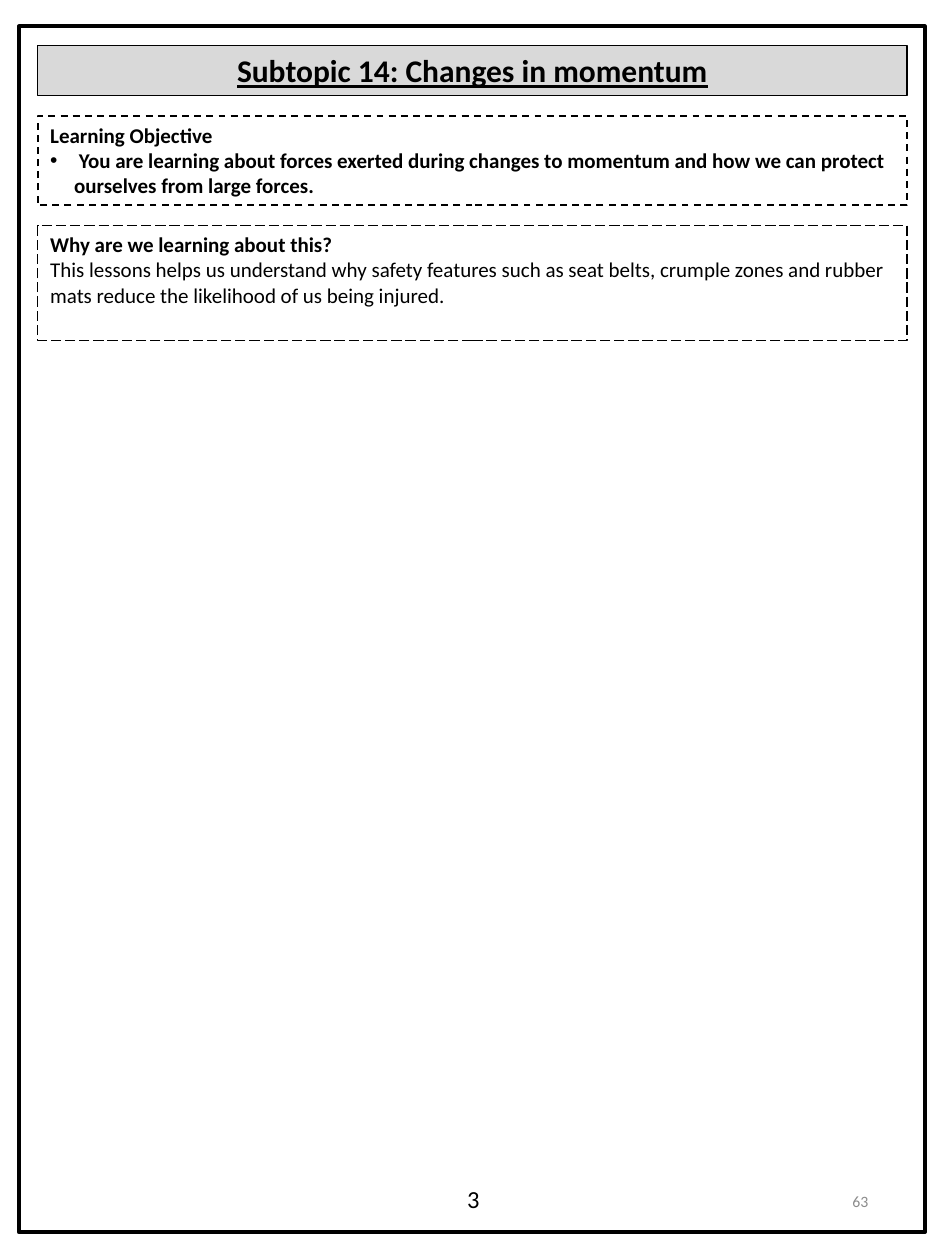
"""Build a lesson opener with a title, two dashed panels and a footer."""
from dataclasses import dataclass

from lxml.etree import SubElement
from pptx import Presentation
from pptx.dml.color import RGBColor
from pptx.enum.dml import MSO_LINE_DASH_STYLE as Dash
from pptx.enum.shapes import MSO_SHAPE as Kind
from pptx.enum.text import MSO_ANCHOR as Anchor, PP_ALIGN as Align
from pptx.oxml.ns import qn
from pptx.util import Inches, Pt


@dataclass(frozen=True)
class Theme:
    face: str = "Calibri"
    ink: str = "000000"
    band: str = "D9D9D9"
    mute: str = "8C8C8C"
    head: int = 18
    body: int = 12
    page: int = 14
    small: int = 9
    rule: float = 2.25


LOOK = Theme()
WIDE, HIGH = 7.5, 10
COL = WIDE / 50
LEFT, SPAN = 2 * COL, 46 * COL
TOP, GAP = 0.36, 0.16
HANG = 0.19

TITLE = {"size": LOOK.head, "bold": True, "line": True, "align": Align.CENTER}
STRONG = {"size": LOOK.body, "bold": True}
PLAIN = {"size": LOOK.body}
POINT = {**STRONG, "bullet": "•"}

PANELS = [
    {"high": 0.4, "fill": LOOK.band, "pen": 0.75, "dash": None, "text": [
        ("Subtopic 14: Changes in momentum", TITLE)]},
    {"high": 0.71, "fill": None, "pen": 1, "dash": Dash.DASH, "text": [
        ("Learning Objective", STRONG),
        (" You are learning about forces exerted during changes to momentum "
         "and how we can protect ourselves from large forces.", POINT)]},
    {"high": 0.91, "fill": None, "pen": 0.75, "dash": Dash.LONG_DASH, "text": [
        ("Why are we learning about this?", STRONG),
        ("This lessons helps us understand why safety features such as seat "
         "belts, crumple zones and rubber mats reduce the likelihood of us "
         "being injured.", PLAIN)]},
]

FOOTER = [
    ((3.61, 9.35, 0.53, 0.34), Anchor.TOP, "3", {"size": LOOK.page}),
    ((5.3, 9.27, 1.69, 0.53), Anchor.MIDDLE, "63",
     {"size": LOOK.small, "ink": LOOK.mute, "align": Align.RIGHT}),
]


def tint(code):
    return RGBColor.from_string(code)


def write(shape, lines, anchor=Anchor.TOP):
    frame = shape.text_frame
    frame.word_wrap = True
    frame.vertical_anchor = anchor
    for row, (text, style) in enumerate(lines):
        para = frame.add_paragraph() if row else frame.paragraphs[0]
        para.text = text
        para.alignment = style.get("align", Align.LEFT)
        font = para.font
        font.name, font.size = LOOK.face, Pt(style["size"])
        font.bold = style.get("bold", False)
        font.underline = style.get("line", False)
        font.color.rgb = tint(style.get("ink", LOOK.ink))
        if "bullet" in style:
            props = para._p.get_or_add_pPr()
            props.set("marL", str(Inches(HANG)))
            props.set("indent", str(-Inches(HANG)))
            mark = SubElement(props, qn("a:buFont"))
            mark.set("typeface", "Arial")
            props.insert(0, mark)
            sign = SubElement(props, qn("a:buChar"))
            sign.set("char", style["bullet"])
            props.insert(1, sign)


def frame_box(slide, box, pen, fill=None, dash=None):
    shape = slide.shapes.add_shape(Kind.RECTANGLE, *map(Inches, box))
    shape.shadow.inherit = False
    if fill:
        shape.fill.solid()
        shape.fill.fore_color.rgb = tint(fill)
    else:
        shape.fill.background()
    shape.line.color.rgb = tint(LOOK.ink)
    shape.line.width = Pt(pen)
    if dash:
        shape.line.dash_style = dash
    return shape


def main():
    deck = Presentation()
    deck.slide_width, deck.slide_height = Inches(WIDE), Inches(HIGH)
    slide = deck.slides.add_slide(deck.slide_layouts[6])
    frame_box(slide, (COL, 0.21, 7.19, 9.57), LOOK.rule)
    top = TOP
    for item in PANELS:
        box = (LEFT, top, SPAN, item["high"])
        panel = frame_box(slide, box, item["pen"], item["fill"], item["dash"])
        write(panel, item["text"])
        top += item["high"] + GAP
    for box, anchor, text, style in FOOTER:
        label = slide.shapes.add_textbox(*map(Inches, box))
        write(label, [(text, style)], anchor)
    deck.save("out.pptx")


if __name__ == "__main__":
    main()
